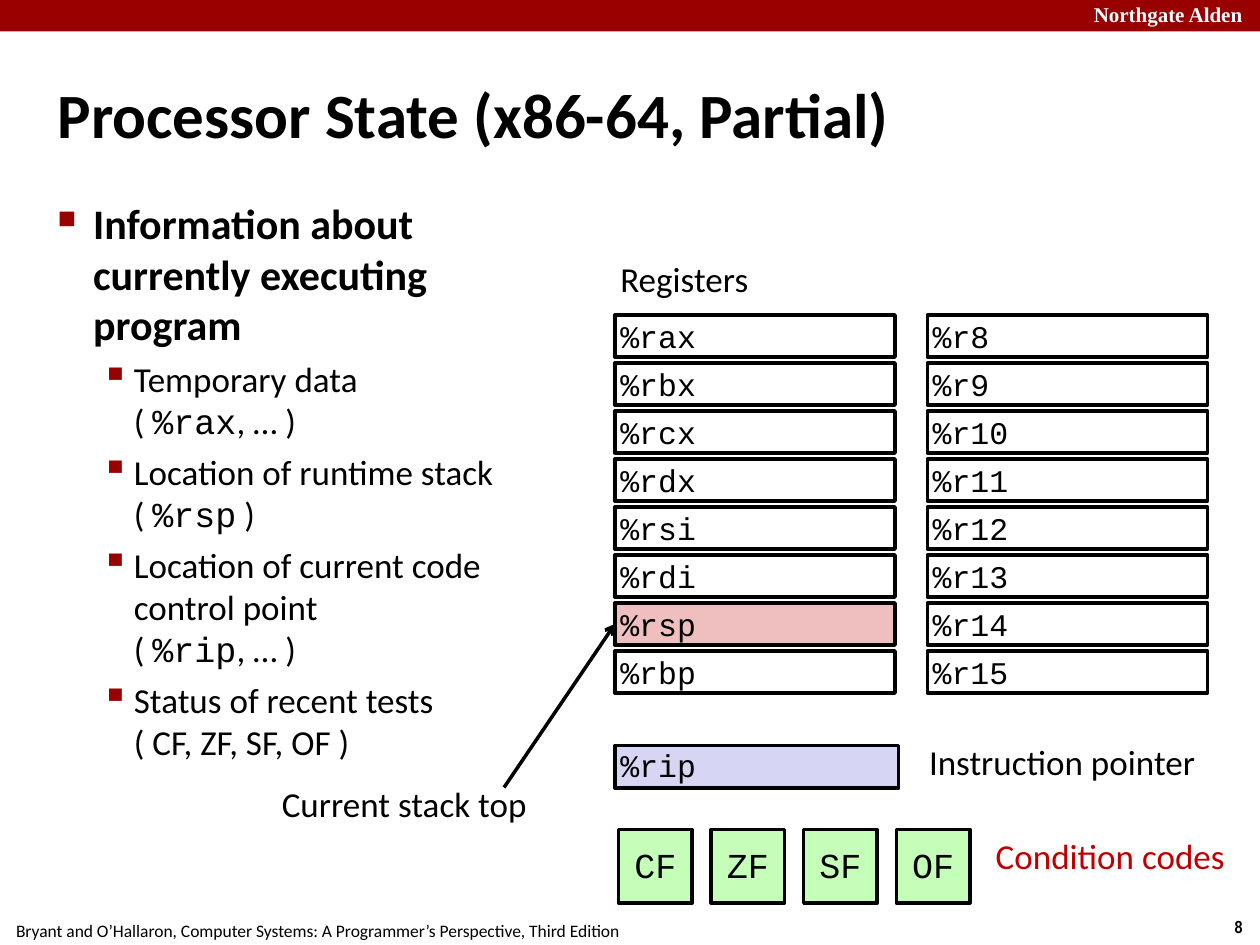
import lxml.etree
import pptx
import pptx.dml.color
import pptx.enum.shapes
import pptx.enum.text
import pptx.oxml.ns
import pptx.util

Pt = pptx.util.Pt
RGBColor = pptx.dml.color.RGBColor
MSO_SHAPE = pptx.enum.shapes.MSO_SHAPE
MSO_ANCHOR = pptx.enum.text.MSO_ANCHOR
MSO_AUTO_SIZE = pptx.enum.text.MSO_AUTO_SIZE
PP_ALIGN = pptx.enum.text.PP_ALIGN
qn = pptx.oxml.ns.qn

THEME = {
    "ink": "000000",
    "paper": "FFFFFF",
    "crimson": "990000",
    "condition_label": "C00000",
    "stack": "EFBFBF",
    "pointer": "D6D6F4",
    "condition": "C5FEB8",
    "body_font": "Calibri",
    "code_font": "Courier New",
    "banner_font": "Times New Roman",
    "number_font": "Arial Narrow",
    "title_size": 36,
    "topic_size": 24,
    "label_size": 20,
    "register_size": 18,
    "banner_size": 12,
    "footer_size": 10,
}


def write(shape, text, *, font=THEME["body_font"], size=THEME["label_size"],
          color=THEME["ink"], bold=False, align=PP_ALIGN.LEFT,
          anchor=MSO_ANCHOR.TOP, inset=(3, 3), wrap=True, spacing=None):
    frame = shape.text_frame
    frame.word_wrap = wrap
    frame.auto_size = MSO_AUTO_SIZE.NONE if wrap else MSO_AUTO_SIZE.SHAPE_TO_FIT_TEXT
    frame.vertical_anchor = anchor
    frame.margin_left = frame.margin_right = Pt(inset[0])
    frame.margin_top = frame.margin_bottom = Pt(inset[1])
    paragraph = frame.add_paragraph() if frame.text else frame.paragraphs[0]
    paragraph.alignment = align
    if spacing:
        paragraph.line_spacing = spacing
    for part_number, part in enumerate(text.split("`")):
        for line_number, line in enumerate(part.split("\n")):
            if line_number:
                paragraph.add_line_break()
            if line:
                run = paragraph.add_run()
                run.text = line
                run.font.name = THEME["code_font"] if part_number % 2 else font
                run.font.size = Pt(size)
                run.font.bold = bold
                run.font.color.rgb = RGBColor.from_string(color)
    return paragraph


def box(left, top, width, height, fill=None, outlined=True):
    shape = slide.shapes.add_shape(
        MSO_SHAPE.RECTANGLE, Pt(left), Pt(top), Pt(width), Pt(height))
    shape.shadow.inherit = False
    if fill:
        shape.fill.solid()
        shape.fill.fore_color.rgb = RGBColor.from_string(fill)
    else:
        shape.fill.background()
    if outlined:
        shape.line.color.rgb = RGBColor.from_string(THEME["ink"])
        shape.line.width = Pt(2)
    else:
        shape.line.fill.background()
    return shape


presentation = pptx.Presentation()
presentation.slide_width = Pt(720)
presentation.slide_height = Pt(540)
slide = presentation.slides.add_slide(presentation.slide_layouts[5])

page_number = slide.shapes.add_textbox(Pt(695.5), Pt(520), Pt(24.5), Pt(19.4))
write(page_number, "8", font=THEME["number_font"], size=THEME["footer_size"],
      bold=True, align=PP_ALIGN.CENTER, inset=(7.2, 3.6), wrap=False)
citation = slide.shapes.add_textbox(Pt(-1.5), Pt(522), Pt(366), Pt(19.4))
write(citation,
      "Bryant and O’Hallaron, Computer Systems: A Programmer’s Perspective, Third Edition",
      size=THEME["footer_size"], align=PP_ALIGN.CENTER, inset=(7.2, 3.6), wrap=False)

box(0, 0, 720, 18, THEME["crimson"], outlined=False)
school = slide.shapes.add_textbox(Pt(622), Pt(-2), Pt(104), Pt(20))
write(school, "Northgate Alden", font=THEME["banner_font"],
      size=THEME["banner_size"], color=THEME["paper"], bold=True)

title = slide.shapes.title
title.left, title.top, title.width, title.height = Pt(30), Pt(20), Pt(660), Pt(90)
write(title, "Processor State (x86-64, Partial)", size=THEME["title_size"],
      bold=True, anchor=MSO_ANCHOR.MIDDLE)

outline = slide.shapes.add_textbox(Pt(30), Pt(110), Pt(263), Pt(428))
outline_points = [
    (0, "Information about currently executing program"),
    (1, "Temporary data\n( `%rax`, … )"),
    (1, "Location of runtime stack\n( `%rsp` )"),
    (1, "Location of current code control point\n( `%rip`, … )"),
    (1, "Status of recent tests\n( CF, ZF, SF, OF )"),
]
outline_levels = [
    {"size": THEME["topic_size"], "bold": True, "before": 6,
     "margin": 20.25, "hanging": 20.25, "bullet": "■", "percent": 60},
    {"size": THEME["label_size"], "bold": False, "before": 5,
     "margin": 43.5, "hanging": 18.75, "bullet": "▪", "percent": 110},
]
for level, point in outline_points:
    style = outline_levels[level]
    paragraph = write(outline, point, size=style["size"], bold=style["bold"])
    paragraph.level = level
    paragraph.space_before = Pt(style["before"])
    properties = paragraph._p.get_or_add_pPr()
    properties.set("marL", str(Pt(style["margin"])))
    properties.set("indent", str(-Pt(style["hanging"])))
    bullet_color = lxml.etree.SubElement(properties, qn("a:buClr"))
    lxml.etree.SubElement(bullet_color, qn("a:srgbClr"), val=THEME["crimson"])
    lxml.etree.SubElement(properties, qn("a:buSzPct"), val=str(style["percent"] * 1000))
    lxml.etree.SubElement(properties, qn("a:buChar"), char=style["bullet"])

labels = [
    ("Registers", 351.5, 144, 81, PP_ALIGN.LEFT),
    ("Current stack top", 156, 444, 150, PP_ALIGN.CENTER),
    ("Instruction pointer", 525.5, 420, 163, PP_ALIGN.CENTER),
]
for text, left, top, width, align in labels:
    label = slide.shapes.add_textbox(Pt(left), Pt(top), Pt(width), Pt(30))
    write(label, text, align=align, wrap=False)

register_columns = [
    (351.5, ["%rax", "%rbx", "%rcx", "%rdx", "%rsi", "%rdi", "%rsp", "%rbp"]),
    (530, ["%r8", "%r9", "%r10", "%r11", "%r12", "%r13", "%r14", "%r15"]),
]
for left, names in register_columns:
    for row, name in enumerate(names):
        register = box(left, 180 + 27.43 * row, 160, 24,
                       THEME["stack"] if name == "%rsp" else None)
        write(register, name, font=THEME["code_font"],
              size=THEME["register_size"], anchor=MSO_ANCHOR.MIDDLE)

instruction_pointer = box(351.5, 426, 162, 24.5, THEME["pointer"])
write(instruction_pointer, "%rip", font=THEME["code_font"],
      size=THEME["register_size"], anchor=MSO_ANCHOR.MIDDLE, spacing=0.95)

for column, flag in enumerate(["CF", "ZF", "SF", "OF"]):
    condition_code = box(353.5 + 52.9 * column, 474, 42, 42, THEME["condition"])
    write(condition_code, flag, font=THEME["code_font"], align=PP_ALIGN.CENTER,
          anchor=MSO_ANCHOR.MIDDLE, spacing=0.95)

condition_label = slide.shapes.add_textbox(Pt(566), Pt(474), Pt(142), Pt(35))
write(condition_label, "Condition codes", color=THEME["condition_label"])

stack_arrow = slide.shapes.add_connector(
    pptx.enum.shapes.MSO_CONNECTOR.STRAIGHT, Pt(288), Pt(450), Pt(351.5), Pt(356.5))
stack_arrow.line.color.rgb = RGBColor.from_string(THEME["ink"])
stack_arrow.line.width = Pt(2)
lxml.etree.SubElement(stack_arrow.line._get_or_add_ln(), qn("a:tailEnd"), type="arrow")
lxml.etree.SubElement(stack_arrow._element.spPr, qn("a:effectLst"))

presentation.save("out.pptx")
